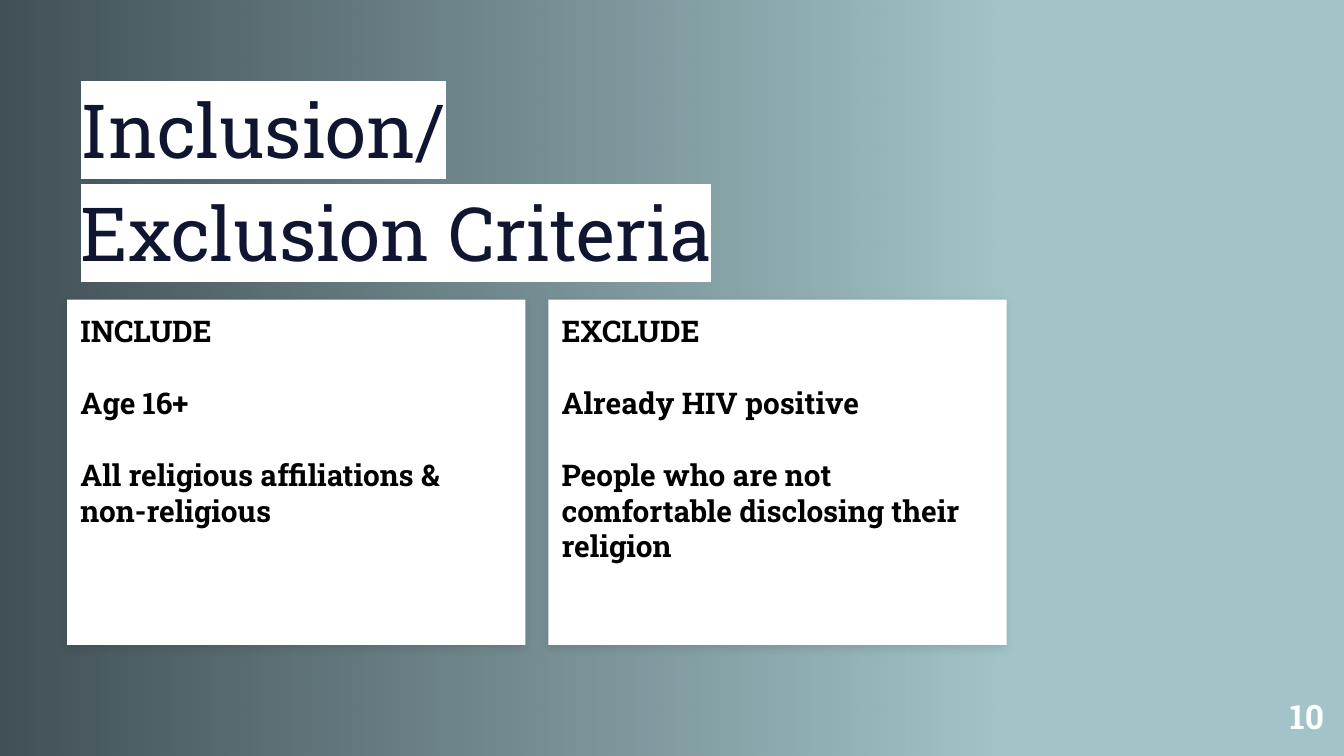
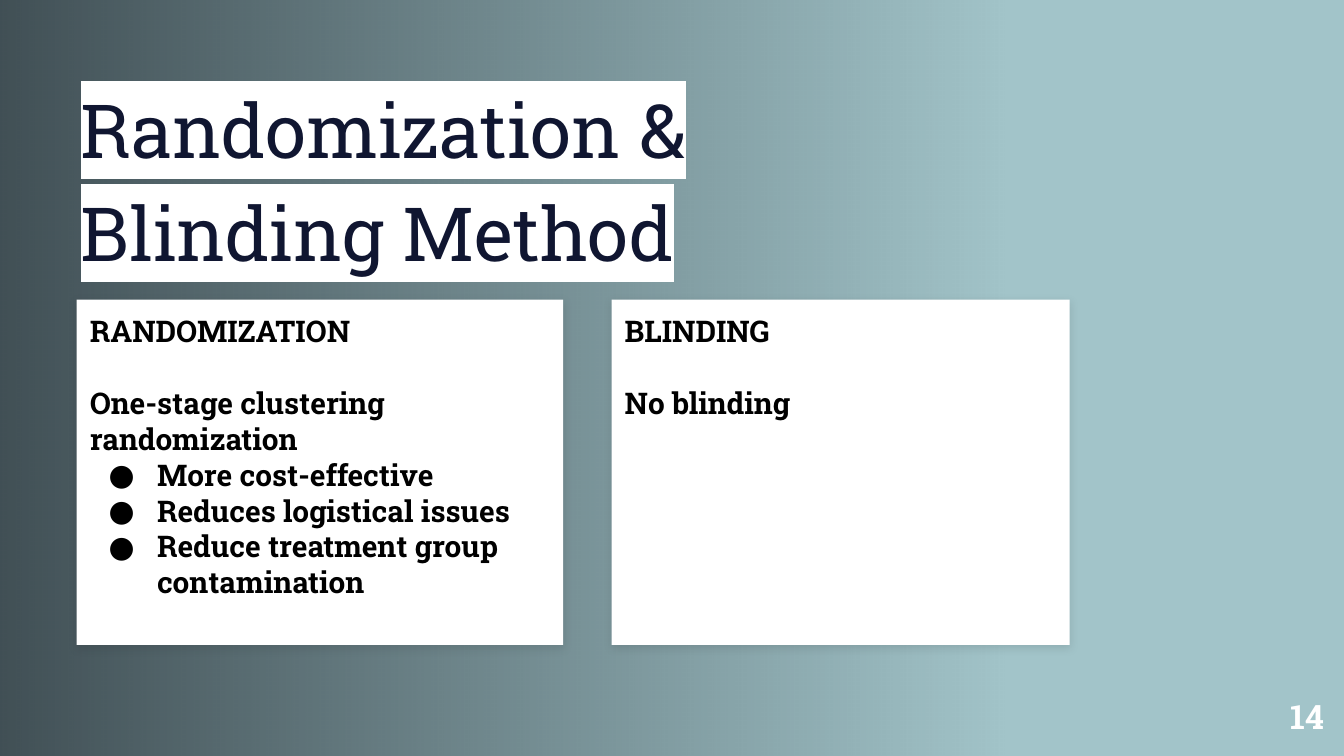
from lxml import etree
from pptx import Presentation
from pptx import util as u
from pptx.dml import color as c
from pptx.enum import shapes, text
from pptx.oxml import ns

FONT = "Roboto Slab"
WHITE, BLACK, NAVY = "FFFFFF", "000000", "101631"
BACKDROP, SHADE = "A2C4C9", "000208"
WIDTH = 10
HEIGHT = WIDTH * 9 / 16
CARD_TOP, CARD_HEIGHT = 2.23, 2.57
BLANK_LINE = 19.2
rgb = c.RGBColor.from_string

# Each card: left, width, heading, statements, bullets
PAGES = [
    ("Inclusion/Exclusion Criteria", "10", [
        (0.5, 3.41, "INCLUDE",
         ["Age 16+", "All religious affiliations & non-religious"], []),
        (4.08, 3.41, "EXCLUDE",
         ["Already HIV positive",
          "People who are not comfortable disclosing their religion"], []),
    ]),
    ("Randomization & Blinding Method", "14", [
        (0.57, 3.62, "RANDOMIZATION", ["One-stage clustering randomization"],
         ["More cost-effective", "Reduces logistical issues",
          "Reduce treatment group contamination"]),
        (4.55, 3.41, "BLINDING", ["No blinding"], []),
    ]),
]


def add_xml(parent, tag, **attributes):
    return etree.SubElement(parent, ns.qn(tag), attributes)


def write(box, words, size=16, color=BLACK, bold=True, align=text.PP_ALIGN.LEFT,
          anchor=text.MSO_ANCHOR.TOP, first=True, after=0):
    """Write one paragraph in a box and return it with its span."""
    frame = box.text_frame
    if first:
        frame.word_wrap = True
        frame.auto_size = text.MSO_AUTO_SIZE.NONE
        frame.vertical_anchor = anchor
        frame.margin_left = frame.margin_right = u.Inches(0.1)
        frame.margin_top = frame.margin_bottom = u.Inches(0.1)
    para = frame.paragraphs[0] if first else frame.add_paragraph()
    para.alignment = align
    para.space_before, para.space_after = u.Pt(0), u.Pt(after)
    span = para.add_run()
    span.text = words
    span.font.name, span.font.size, span.font.bold = FONT, u.Pt(size), bold
    span.font.color.rgb = rgb(color)
    return para, span


deck = Presentation()
deck.slide_width, deck.slide_height = u.Inches(WIDTH), u.Inches(HEIGHT)
backdrop = deck.slide_master.background.fill
backdrop.solid()
backdrop.fore_color.rgb = rgb(BACKDROP)

for heading, number, cards in PAGES:
    page = deck.slides.add_slide(deck.slide_layouts[5])

    # Shade that fades out to the right, behind everything else
    band = page.shapes.add_shape(shapes.MSO_SHAPE.RECTANGLE, 0, 0,
                                 u.Inches(7.5), u.Inches(HEIGHT))
    band.shadow.inherit = False
    band.line.fill.background()
    band.fill.gradient()
    band.fill.gradient_angle = 180
    for stop in band.fill.gradient_stops:
        stop.color.rgb = rgb(SHADE)
    for color, alpha in zip(band._element.iter(ns.qn("a:srgbClr")), ("0", "60000")):
        add_xml(color, "a:alpha", val=alpha)
    page.shapes._spTree.insert(2, band._element)

    # Highlighted title
    title = page.shapes.title
    title.left, title.top = u.Inches(0.5), u.Inches(0.74)
    title.width, title.height = u.Inches(5), u.Inches(1.42)
    para, span = write(title, heading, size=40, color=NAVY, bold=False,
                       anchor=text.MSO_ANCHOR.BOTTOM)
    para.line_spacing = 1.15
    properties = span.font._element
    highlight = add_xml(properties, "a:highlight")
    add_xml(highlight, "a:srgbClr", val=WHITE)
    properties.find(ns.qn("a:solidFill")).addnext(highlight)

    # Page number
    box = page.shapes.add_textbox(u.Inches(9.38), u.Inches(5.02),
                                  u.Inches(0.57), u.Inches(0.61))
    write(box, number, size=18, color=WHITE, align=text.PP_ALIGN.RIGHT,
          anchor=text.MSO_ANCHOR.MIDDLE)

    # Cards with a soft shadow
    for left, width, label, statements, bullets in cards:
        card = page.shapes.add_shape(shapes.MSO_SHAPE.RECTANGLE, u.Inches(left),
                                     u.Inches(CARD_TOP), u.Inches(width),
                                     u.Inches(CARD_HEIGHT))
        card.fill.solid()
        card.fill.fore_color.rgb = rgb(WHITE)
        card.line.fill.background()
        card.shadow.inherit = False
        effects = card._element.spPr.find(ns.qn("a:effectLst"))
        shadow = add_xml(effects, "a:outerShdw", blurRad=str(u.Pt(4.5)),
                         dist=str(u.Pt(1.5)), dir="5400000", algn="bl",
                         rotWithShape="0")
        add_xml(add_xml(shadow, "a:srgbClr", val=BLACK), "a:alpha", val="10000")

        write(card, label, after=BLANK_LINE)
        for statement in statements:
            gap = BLANK_LINE if statement != statements[-1] else 0
            write(card, statement, first=False, after=gap)
        for bullet in bullets:
            para, span = write(card, bullet, first=False)
            layout = para._p.get_or_add_pPr()
            layout.set("marL", str(u.Inches(0.5)))
            layout.set("indent", str(u.Inches(-0.36)))
            add_xml(add_xml(layout, "a:buClr"), "a:srgbClr", val=BLACK)
            add_xml(layout, "a:buFont", typeface=FONT)
            add_xml(layout, "a:buChar", char="●")

deck.save("out.pptx")
